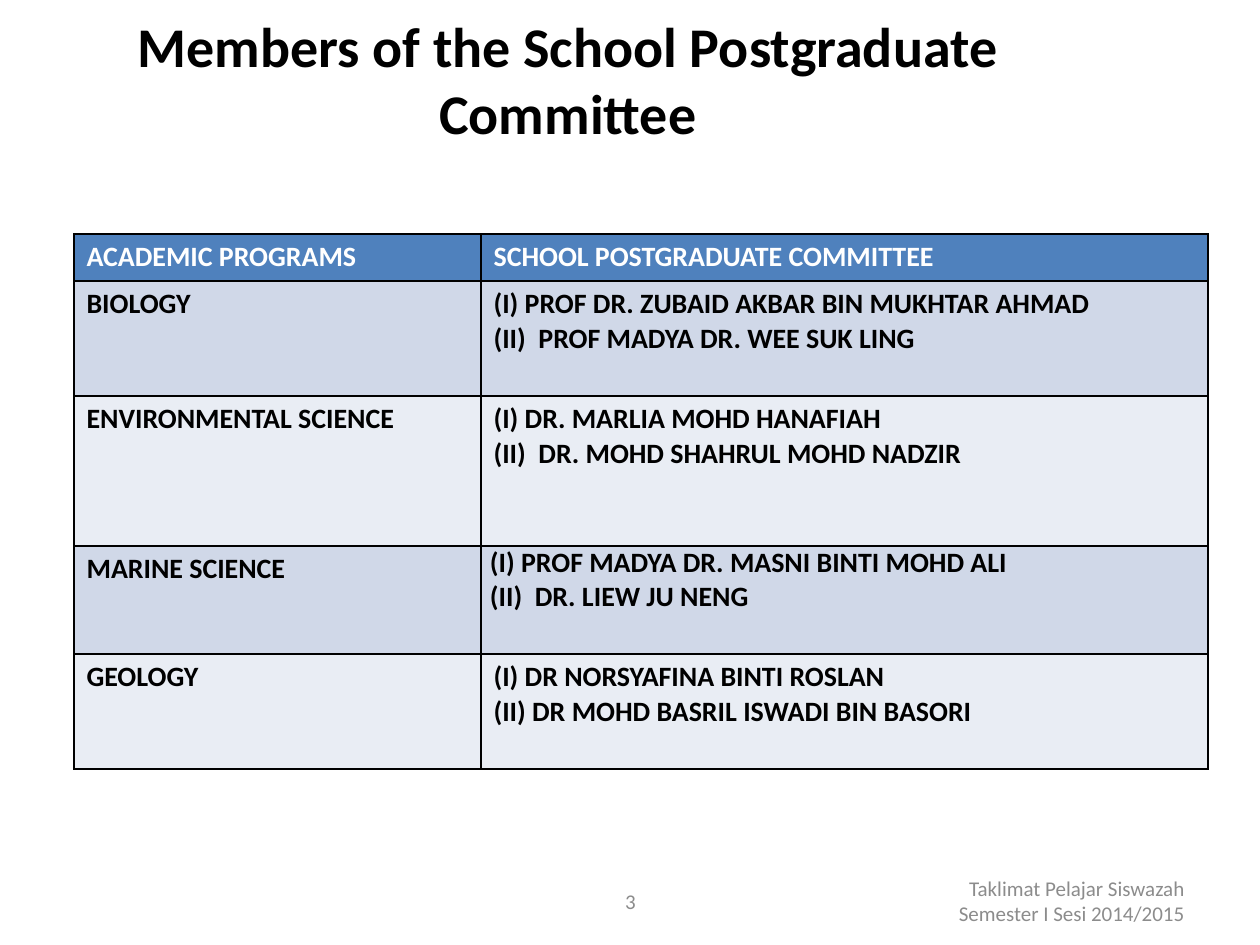
from lxml import etree
from pptx import Presentation
from pptx.dml.color import RGBColor
from pptx.enum.text import MSO_ANCHOR, PP_ALIGN
from pptx.oxml.ns import qn
from pptx.util import Emu, Pt

PX = 914400 // 126
FONT = "Calibri"
BLACK = RGBColor(0x00, 0x00, 0x00)
WHITE = RGBColor(0xFF, 0xFF, 0xFF)
GREY = RGBColor(0x8C, 0x8C, 0x8C)
HEADER_BLUE = RGBColor(0x4F, 0x81, 0xBD)
BAND_FILLS = [RGBColor(0xD0, 0xD8, 0xE8), RGBColor(0xE9, 0xED, 0xF4)]

# text, (left, top, width, height), size, bold, colour, alignment
TEXTS = [
    ("Members of the School Postgraduate Committee",
     (1, 0, 1134, 157), 32, True, BLACK, PP_ALIGN.CENTER),
    ("3", (431, 876, 399, 50), 12, False, GREY, PP_ALIGN.CENTER),
    ("Taklimat Pelajar Siswazah Semester I Sesi 2014/2015",
     (903, 876, 294, 50), 12, False, GREY, PP_ALIGN.RIGHT),
]

TABLE_LEFT, TABLE_TOP = 74, 234
COLUMN_WIDTHS = [407, 727]
# row height, programme, committee members
ROWS = [
    (47, "ACADEMIC PROGRAMS", ["SCHOOL POSTGRADUATE COMMITTEE"]),
    (115, "BIOLOGY", ["(I) PROF DR. ZUBAID AKBAR BIN MUKHTAR AHMAD",
                      "(II)  PROF MADYA DR. WEE SUK LING"]),
    (150, "ENVIRONMENTAL SCIENCE", ["(I) DR. MARLIA MOHD HANAFIAH",
                                    "(II)  DR. MOHD SHAHRUL MOHD NADZIR"]),
    (108, "MARINE SCIENCE", ["(I) PROF MADYA DR. MASNI BINTI MOHD ALI",
                             "(II)  DR. LIEW JU NENG"]),
    (115, "GEOLOGY", ["(I) DR NORSYAFINA BINTI ROSLAN",
                      "(II) DR MOHD BASRIL ISWADI BIN BASORI"]),
]
TIGHT_CELL = (3, 1)  # this cell has narrower margins than the rest
TIGHT_MARGIN = 9


def px(length):
    return Emu(length * PX)


def style_paragraph(paragraph, size, bold, color):
    font = paragraph.font
    font.name, font.size, font.bold = FONT, Pt(size), bold
    font.color.rgb = color


def add_text(slide, text, box, size, bold, color, alignment):
    frame = slide.shapes.add_textbox(*map(px, box)).text_frame
    frame.word_wrap = True
    frame.vertical_anchor = MSO_ANCHOR.MIDDLE
    frame.text = text
    paragraph = frame.paragraphs[0]
    paragraph.alignment = alignment
    style_paragraph(paragraph, size, bold, color)


def add_borders(cell):
    """Put a thin black line on all four sides, ahead of the cell's fill."""
    properties = cell._tc.get_or_add_tcPr()
    for position, tag in enumerate(("a:lnL", "a:lnR", "a:lnT", "a:lnB")):
        line = etree.Element(qn(tag), w=str(Pt(1)))
        fill = etree.SubElement(line, qn("a:solidFill"))
        etree.SubElement(fill, qn("a:srgbClr"), val=str(BLACK))
        properties.insert(position, line)


def fill_cell(cell, lines, fill, color):
    cell.fill.solid()
    cell.fill.fore_color.rgb = fill
    cell.text = "\n".join(lines)
    for paragraph in cell.text_frame.paragraphs:
        style_paragraph(paragraph, 16, True, color)
    add_borders(cell)


def add_committee_table(slide):
    heights = [height for height, _, _ in ROWS]
    table = slide.shapes.add_table(
        len(ROWS), len(COLUMN_WIDTHS), px(TABLE_LEFT), px(TABLE_TOP),
        px(sum(COLUMN_WIDTHS)), px(sum(heights))).table
    for column, width in zip(table.columns, COLUMN_WIDTHS):
        column.width = px(width)
    for index, (height, program, members) in enumerate(ROWS):
        table.rows[index].height = px(height)
        fill = BAND_FILLS[(index - 1) % 2] if index else HEADER_BLUE
        color = BLACK if index else WHITE
        fill_cell(table.cell(index, 0), [program], fill, color)
        fill_cell(table.cell(index, 1), members, fill, color)
    tight = table.cell(*TIGHT_CELL)
    tight.margin_left = tight.margin_right = px(TIGHT_MARGIN)
    tight.margin_top = tight.margin_bottom = 0


def main():
    presentation = Presentation()
    presentation.slide_width, presentation.slide_height = px(1260), px(945)
    slide = presentation.slides.add_slide(presentation.slide_layouts[6])
    add_committee_table(slide)
    for text in TEXTS:
        add_text(slide, *text)
    presentation.save("out.pptx")


if __name__ == "__main__":
    main()
